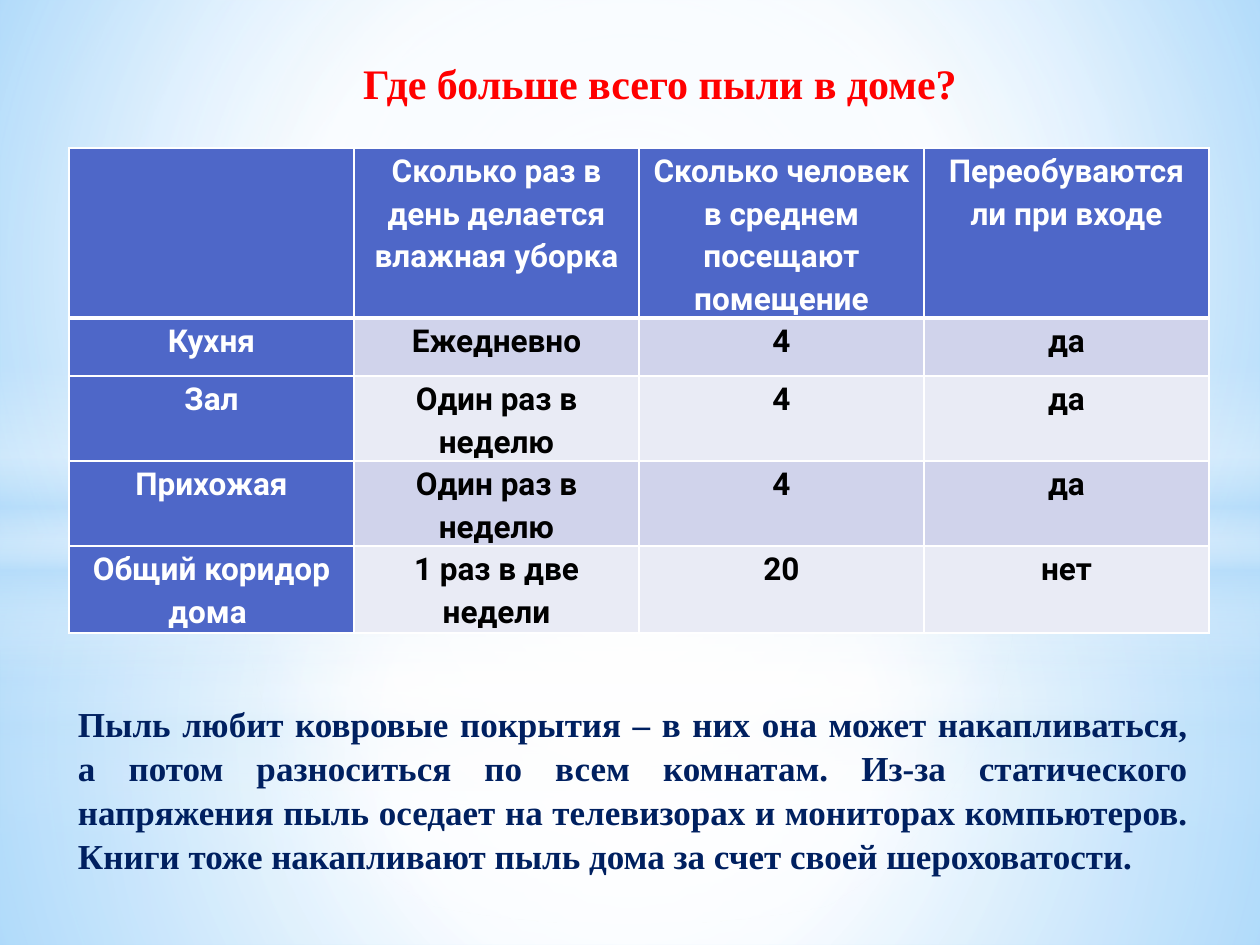
from dataclasses import dataclass
from lxml.etree import SubElement as Sub
from pptx import Presentation
from pptx.dml.color import RGBColor
from pptx.enum.shapes import MSO_SHAPE as Kind
from pptx.enum.text import MSO_ANCHOR as Anchor, MSO_AUTO_SIZE as Auto, PP_ALIGN as Align
from pptx.oxml.ns import qn
from pptx.util import Emu, Pt

SCALE = 914400 / 126
BLUE, WHITE, SKY = "4E67C8", "FFFFFF", "B4DCFA"
BANDS = ("D0D3EB", "E9EBF5")
SERIF = "Times New Roman"


@dataclass(frozen=True)
class Stop:
    pos: int
    color: str
    alpha: int = 100


@dataclass(frozen=True)
class Layer:
    top: int
    height: int
    stops: tuple[Stop, ...]
    kind: Kind = Kind.RECTANGLE
    focus: tuple[int, ...] | None = (50, 50, 50, 50)


def px(n: int) -> Emu:
    return Emu(round(n * SCALE))


def rgb(code: str) -> RGBColor:
    return RGBColor.from_string(code)


def fade(props, stops: tuple[Stop, ...], focus: tuple[int, ...] | None) -> None:
    grad = props.find(qn("a:gradFill"))
    for child in list(grad):
        grad.remove(child)
    group = Sub(grad, qn("a:gsLst"))
    for stop in stops:
        mark = Sub(group, qn("a:gs"), pos=str(stop.pos * 1000))
        color = Sub(mark, qn("a:srgbClr"), val=stop.color)
        if stop.alpha < 100:
            Sub(color, qn("a:alpha"), val=str(stop.alpha * 1000))
    if focus is None:
        Sub(grad, qn("a:lin"), ang="5400000", scaled="0")
    else:
        way = Sub(grad, qn("a:path"), {"path": "circle"})
        sides = {side: str(n * 1000) for side, n in zip("ltrb", focus)}
        Sub(way, qn("a:fillToRect"), sides)


def glow(slide, layer: Layer) -> None:
    shape = slide.shapes.add_shape(layer.kind, 0, px(layer.top), px(1260), px(layer.height))
    shape.shadow.inherit = False
    shape.line.fill.background()
    shape.fill.gradient()
    fade(shape.element.spPr, layer.stops, layer.focus)


def write(frame, text: str, *, font: str, size: int, color: str,
          align: Align, space: float, indent: int = 0) -> None:
    frame.text = text
    for para in frame.paragraphs:
        para.alignment = align
        para.line_spacing = space
        para.space_before = para.space_after = Pt(0)
        props = para._p.get_or_add_pPr()
        props.set("marL", str(px(indent)))
        props.set("indent", "0")
        Sub(props, qn("a:buNone"))
        style = para.runs[0].font
        style.name, style.size, style.bold = font, Pt(size), True
        style.color.rgb = rgb(color)


def place(shape, box: tuple[int, ...], inset: int, wrap: bool):
    shape.left, shape.top, shape.width, shape.height = map(px, box)
    frame = shape.text_frame
    frame.auto_size = Auto.NONE
    frame.word_wrap = wrap
    frame.vertical_anchor = Anchor.TOP
    frame.margin_left = frame.margin_right = px(13)
    frame.margin_top, frame.margin_bottom = px(inset), px(6)
    shape.element.getparent().append(shape.element)
    return frame


def edge(cell, row: int) -> None:
    wide = {"T": 3 if row == 1 else 1, "B": 3 if row == 0 else 1}
    props = cell._tc.get_or_add_tcPr()
    for i, side in enumerate("LRTB"):
        line = Sub(props, qn(f"a:ln{side}"), w=str(Pt(wide.get(side, 1))))
        fill = Sub(line, qn("a:solidFill"))
        Sub(fill, qn("a:srgbClr"), val=WHITE)
        props.insert(i, line)


def grid(slide, rows: list[tuple[str, ...]], heights: tuple[int, ...]) -> None:
    frame = slide.shapes.add_table(len(rows), 4, px(69), px(148), px(1141), px(sum(heights)))
    table = frame.table
    for col in table.columns:
        col.width = px(285)
    for r, (row, height) in enumerate(zip(rows, heights)):
        table.rows[r].height = px(height)
        for c, text in enumerate(row):
            cell = table.cell(r, c)
            head = r == 0 or c == 0
            cell.fill.solid()
            cell.fill.fore_color.rgb = rgb(BLUE if head else BANDS[(r - 1) % 2])
            cell.margin_left = cell.margin_right = px(9)
            cell.margin_top = cell.margin_bottom = 0
            edge(cell, r)
            if text:
                write(cell.text_frame, text, font="Roboto", size=18, align=Align.CENTER,
                      color=WHITE if head else "000000", space=1.15)


def veil(mid: int, *alphas: int) -> tuple[Stop, ...]:
    return tuple(Stop(p, c, a) for p, c, a in zip((0, mid, 100), (WHITE, WHITE, SKY), alphas))


def halo(end: int) -> Layer:
    return Layer(220, 703, (Stop(0, WHITE), Stop(end, WHITE, 0)), Kind.OVAL)


BAND = (Stop(0, WHITE, 0), Stop(29, WHITE, 30), Stop(45, SKY, 40),
        Stop(55, WHITE, 26), Stop(65, SKY, 60), Stop(100, WHITE, 0))
LAYERS = [
    Layer(703, 242, veil(37, 91, 76, 79)),
    Layer(0, 703, veil(48, 89, 62, 79)),
    Layer(519, 315, BAND, focus=None),
    halo(56),
    Layer(533, 412, veil(37, 92, 77, 80)),
    Layer(0, 533, veil(48, 90, 63, 80)),
    Layer(365, 315, BAND, focus=None),
    halo(54),
]
ROWS = [
    ("", "Сколько раз в день делается влажная уборка",
     "Сколько человек в среднем посещают помещение", "Переобуваются ли при входе"),
    ("Кухня", "Ежедневно", "4", "да"),
    ("Зал", "Один раз в неделю", "4", "да"),
    ("Прихожая", "Один раз в неделю", "4", "да"),
    ("Общий коридор дома ", "1 раз в две недели", "20", "нет"),
]
NOTE = (
    "Пыль любит ковровые покрытия – в них она может накапливаться, а потом разноситься "
    "по всем комнатам. Из-за статического напряжения пыль оседает на телевизорах и "
    "мониторах компьютеров. \n"
    "Книги тоже накапливают пыль дома за счет своей шероховатости."
)


def main() -> None:
    deck = Presentation()
    deck.slide_width, deck.slide_height = px(1260), px(945)
    slide = deck.slides.add_slide(deck.slide_layouts[1])
    slide.background.fill.gradient()
    back = slide.element.find(".//" + qn("p:bgPr"))
    fade(back, (Stop(0, "9ED5FF"), Stop(60, WHITE), Stop(100, "5BB9FF")), (20, 10, 20, 60))
    for layer in LAYERS:
        glow(slide, layer)
    grid(slide, ROWS, (170, 58, 85, 85, 87))
    title, body = slide.placeholders
    write(place(body, (59, 601, 1142, 360), 99, True), NOTE, font=SERIF, size=20,
          color="002060", align=Align.JUSTIFY, space=1.05, indent=6)
    write(place(title, (344, 49, 631, 63), 6, False), "Где больше всего пыли в доме?",
          font=SERIF, size=24, color="FF0000", align=Align.JUSTIFY, space=1.05, indent=6)
    deck.save("out.pptx")


if __name__ == "__main__":
    main()
